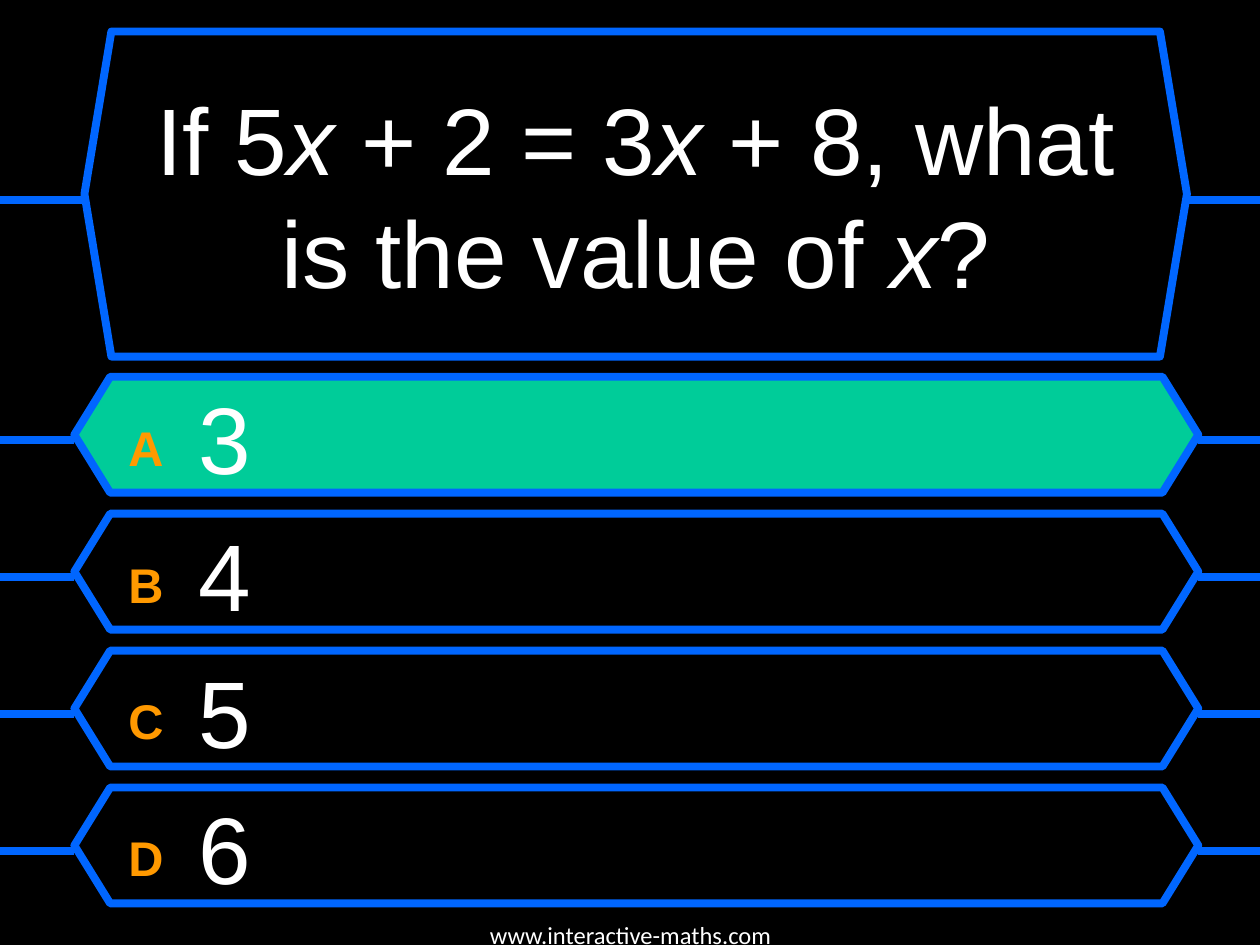
from pptx import Presentation
from pptx.dml.color import RGBColor
from pptx.enum.shapes import MSO_CONNECTOR as CONN, MSO_SHAPE as SHAPE
from pptx.enum.text import MSO_ANCHOR as ANCHOR, PP_ALIGN as ALIGN
from pptx.oxml.ns import qn
from pptx.util import Inches, Pt
from lxml.etree import SubElement

BLACK, WHITE, BLUE, GREEN, ORANGE = "000000", "FFFFFF", "0066FF", "00CC99", "FF9900"
SLIDE_W = 10
LINE_DROP = 0.045  # side lines run slightly below the frame's middle
TEXT = dict(name="Arial", size=Pt(54), bold=False, color=WHITE)
LETTER = dict(name="Arial", size=Pt(48), bold=True, color=ORANGE)
FOOTER = dict(name="Calibri", size=Pt(14), color=WHITE)


def rgb(value):
    return RGBColor.from_string(value)


def add_run(p, text, **fmt):
    r = p.add_run()
    r.text = text
    for key, value in fmt.items():
        if key == "color":
            r.font.color.rgb = rgb(value)
        else:
            setattr(r.font, key, value)
    return r


def add_text_box(slide, box, anchor=ANCHOR.TOP):
    tf = slide.shapes.add_textbox(*map(Inches, box)).text_frame
    tf.word_wrap = True
    tf.vertical_anchor = anchor
    return tf


def style_line(sp):
    sp.line.color.rgb = rgb(BLUE)
    sp.line.width = Pt(4.5)


def add_frame(slide, box, slant, fill=BLACK):
    """Hexagon with a line from each side to the slide's edge."""
    left, top, width, height = box
    y = top + height / 2 + LINE_DROP
    for start, end in ((left, 0), (SLIDE_W, left + width)):
        line = slide.shapes.add_connector(
            CONN.STRAIGHT, Inches(start), Inches(y), Inches(end), Inches(y))
        style_line(line)
        SubElement(line._element.spPr, qn("a:effectLst"))
    sp = slide.shapes.add_shape(SHAPE.HEXAGON, *map(Inches, box))
    sp.shadow.inherit = False
    sp.adjustments[0] = slant
    sp.adjustments[1] = 1.155
    sp.fill.solid()
    sp.fill.fore_color.rgb = rgb(fill)
    style_line(sp)


def add_question(slide, box, parts):
    """Parts alternate between upright and italic text."""
    left, top, width, height = box
    add_frame(slide, box, 0.083)
    inset = 0.165
    tf = add_text_box(slide, (left + inset, top + inset, width - 2 * inset,
                              height - 2 * inset), ANCHOR.MIDDLE)
    p = tf.paragraphs[0]
    p.alignment = ALIGN.CENTER
    for i, part in enumerate(parts):
        add_run(p, part, **TEXT, italic=i % 2 == 1)


def add_answers(slide, box, answers, correct):
    left, top, width, height = box
    row_h = 0.92
    pitch = (height - row_h) / (len(answers) - 1)
    for i in range(len(answers)):
        add_frame(slide, (left, top + i * pitch, width, row_h), 0.309,
                  GREEN if i == correct else BLACK)

    tf = add_text_box(slide, (left + 0.33, top - 0.02, width - 0.59, height + 0.08))
    for i, (letter, answer) in enumerate(zip("ABCD", answers)):
        p = tf.paragraphs[0] if i == 0 else tf.add_paragraph()
        pPr = p._p.get_or_add_pPr()
        pPr.set("marL", str(Inches(0.56)))
        pPr.set("indent", str(Inches(-0.56)))
        if i:
            p.space_before = Pt(13.3)
        r = add_run(p, letter, **LETTER)
        r._r.get_or_add_rPr().set("baseline", "10000")
        add_run(p, "\t" + answer, **TEXT)


def add_footer(slide, box, text):
    p = add_text_box(slide, box).paragraphs[0]
    p.alignment = ALIGN.CENTER
    add_run(p, text, **FOOTER)


def main():
    prs = Presentation()
    prs.slide_width, prs.slide_height = Inches(SLIDE_W), Inches(7.5)
    slide = prs.slides.add_slide(prs.slide_layouts[6])
    slide.background.fill.solid()
    slide.background.fill.fore_color.rgb = rgb(BLACK)

    add_question(slide, (0.67, 0.25, 8.75, 2.58),
                 ("If 5", "x", " + 2 = 3", "x", " + 8, what is the value of ", "x", "?"))
    add_answers(slide, (0.59, 2.99, 8.92, 4.18), "3456", correct=0)
    add_footer(slide, (3.42, 7.25, 3.17, 0.28), "www.interactive-maths.com")
    prs.save("out.pptx")


if __name__ == "__main__":
    main()
